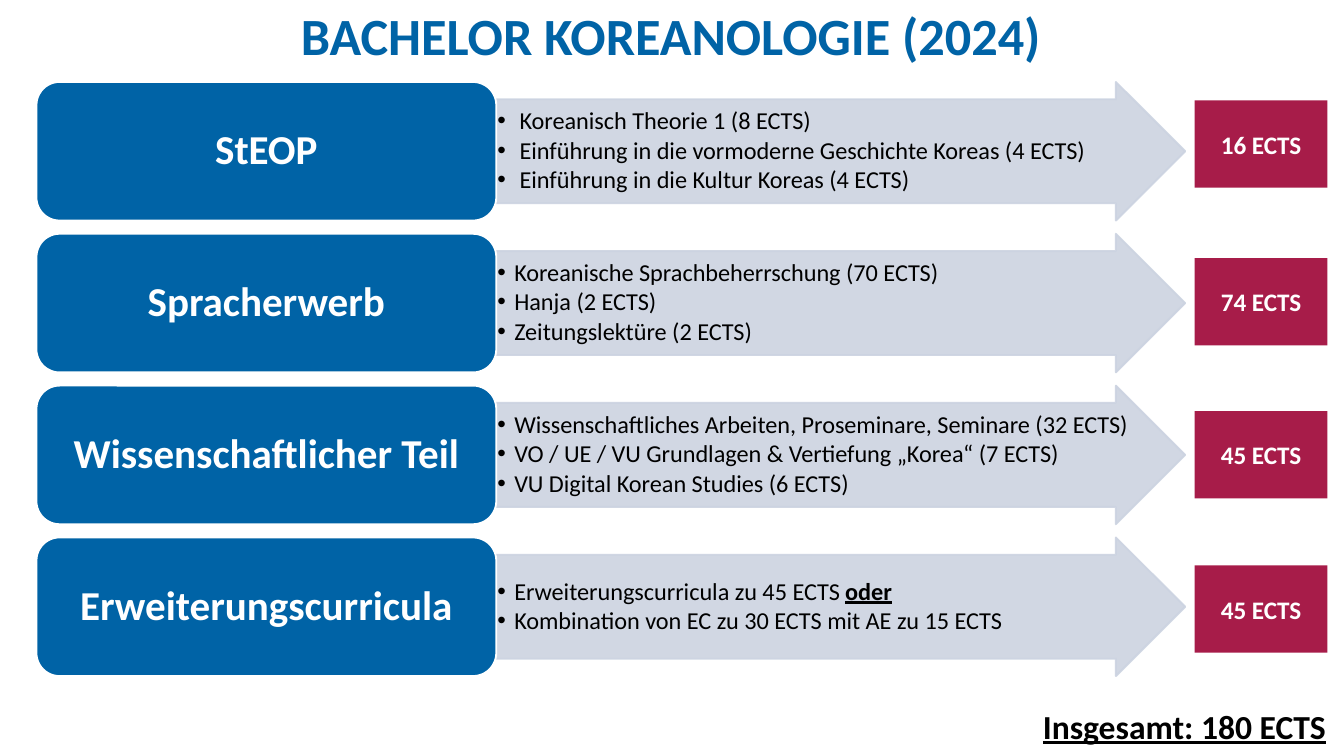
import pptx
import pptx.util
import pptx.dml.color
import pptx.enum.shapes
import pptx.enum.text
import pptx.oxml
import pptx.oxml.ns
from dataclasses import dataclass
from lxml import etree

Cm = pptx.util.Cm
Pt = pptx.util.Pt
MSO_SHAPE = pptx.enum.shapes.MSO_SHAPE
PP_ALIGN = pptx.enum.text.PP_ALIGN
MSO_ANCHOR = pptx.enum.text.MSO_ANCHOR
RGBColor = pptx.dml.color.RGBColor
qn = pptx.oxml.ns.qn


@dataclass(frozen=True)
class Theme:
    font: str = "Calibri"
    blue: str = "0063A6"
    arrow: str = "CCD3E1"
    red: str = "A71C49"
    white: str = "FFFFFF"
    black: str = "000000"
    title_size: float = 28
    area_size: float = 22
    course_size: float = 13
    badge_size: float = 13.5
    total_size: float = 18


theme = Theme()


def add_box(kind, left, top, width, height, fill, line=None):
    sp = s.shapes.add_shape(kind, Cm(left), Cm(top), Cm(width), Cm(height))
    sp.shadow.inherit = False
    sp.fill.solid()
    sp.fill.fore_color.rgb = RGBColor.from_string(fill)
    if line:
        sp.line.color.rgb = RGBColor.from_string(line)
        sp.line.width = Pt(1)
    else:
        sp.line.fill.background()
    sp.text_frame.word_wrap = True
    sp.text_frame.vertical_anchor = MSO_ANCHOR.MIDDLE
    return sp


def style_runs(p, size, color, bold=True, align=PP_ALIGN.CENTER):
    p.alignment = align
    for r in p.runs:
        r.font.name = theme.font
        r.font.size = Pt(size)
        r.font.bold = bold
        r.font.color.rgb = RGBColor.from_string(color)


prs = pptx.Presentation()
prs.slide_width = Cm(25.4)
prs.slide_height = Cm(14.29)
s = prs.slides.add_slide(prs.slide_layouts[6])

title = s.shapes.add_textbox(Cm(0), Cm(0.05), Cm(25.35), Cm(1.3))
tf = title.text_frame
tf.word_wrap = True
tf.vertical_anchor = MSO_ANCHOR.MIDDLE
tf.margin_left = tf.margin_right = tf.margin_top = tf.margin_bottom = 0
p = tf.paragraphs[0]
p.text = "BACHELOR KOREANOLOGIE (2024)"
p.line_spacing = Pt(31)
style_runs(p, theme.title_size, theme.blue)

areas = [
    ("StEOP", "16 ECTS", 1.9, 0.42, [
        "Koreanisch Theorie 1 (8 ECTS)",
        "Einführung in die vormoderne Geschichte Koreas (4 ECTS)",
        "Einführung in die Kultur Koreas (4 ECTS)"]),
    ("Spracherwerb", "74 ECTS", 4.88, 0.32, [
        "Koreanische Sprachbeherrschung (70 ECTS)",
        "Hanja (2 ECTS)",
        "Zeitungslektüre (2 ECTS)"]),
    ("Wissenschaftlicher Teil", "45 ECTS", 7.77, 0.32, [
        "Wissenschaftliches Arbeiten, Proseminare, Seminare (32 ECTS)",
        "VO / UE / VU Grundlagen & Vertiefung „Korea“ (7 ECTS)",
        "VU Digital Korean Studies (6 ECTS)"]),
    ("Erweiterungscurricula", "45 ECTS", 10.69, 0.32, [
        "Erweiterungscurricula zu 45 ECTS oder",
        "Kombination von EC zu 30 ECTS mit AE zu 15 ECTS"]),
]
row_top, row_step, row_height = 1.55, 2.87, 2.62
keyword = "oder"

for i, (name, credits, badge_top, indent, courses) in enumerate(areas):
    top = row_top + i * row_step

    arrow = add_box(MSO_SHAPE.RIGHT_ARROW, 9.37, top, 13.03, row_height, theme.arrow, theme.arrow)
    arrow.adjustments[0] = 0.75
    arrow.adjustments[1] = 0.5
    for color in arrow._element.spPr.iter(qn("a:srgbClr")):
        etree.SubElement(color, qn("a:alpha")).set("val", "90000")
    tf = arrow.text_frame
    tf.margin_left = tf.margin_right = tf.margin_top = tf.margin_bottom = Cm(0.03)
    for j, course in enumerate(courses):
        p = tf.paragraphs[0] if j == 0 else tf.add_paragraph()
        stem = course.removesuffix(keyword)
        p.text = stem
        if stem != course:
            p.add_run().text = keyword
        p.line_spacing = 0.9
        p.space_after = Pt(1.6)
        pPr = p._p.get_or_add_pPr()
        pPr.set("marL", str(Cm(indent)))
        pPr.set("indent", str(-Cm(indent)))
        etree.SubElement(pPr, qn("a:buFont")).set("typeface", "Arial")
        etree.SubElement(pPr, qn("a:buChar")).set("char", "•")
        style_runs(p, theme.course_size, theme.black, False, PP_ALIGN.LEFT)
        if stem != course:
            p.runs[-1].font.bold = True
            p.runs[-1].font.underline = True

    area = add_box(MSO_SHAPE.ROUNDED_RECTANGLE, 0.69, top, 8.69, row_height, theme.blue, theme.white)
    p = area.text_frame.paragraphs[0]
    p.text = name
    p.line_spacing = 0.9
    style_runs(p, theme.area_size, theme.white)

    badge = add_box(MSO_SHAPE.RECTANGLE, 22.58, badge_top, 2.51, 1.65, theme.red)
    p = badge.text_frame.paragraphs[0]
    p.text = credits
    style_runs(p, theme.badge_size, theme.white)

total = s.shapes.add_textbox(Cm(19.46), Cm(13.21), Cm(5.92), Cm(1.02))
total.text_frame.word_wrap = False
p = total.text_frame.paragraphs[0]
p.text = "Insgesamt: 180 ECTS"
style_runs(p, theme.total_size, theme.black, align=PP_ALIGN.LEFT)
p.runs[0].font.underline = True

prs.save("out.pptx")
